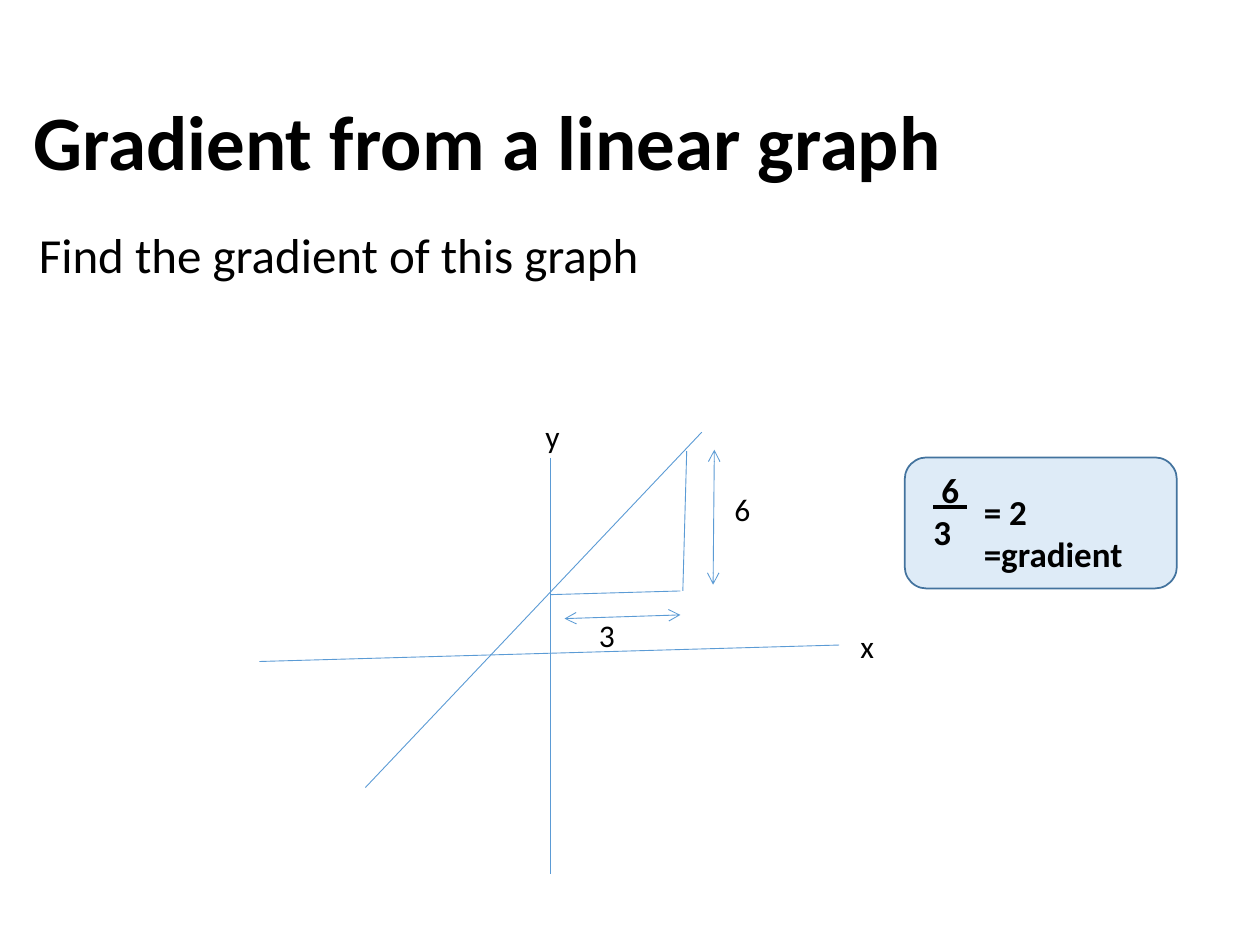
import pptx
import pptx.dml.color
import pptx.enum.shapes
import pptx.enum.text
import pptx.oxml.ns
import pptx.util
from lxml import etree

Pt = pptx.util.Pt
RGBColor = pptx.dml.color.RGBColor
BLACK = RGBColor(0x00, 0x00, 0x00)
GRAPH_BLUE = RGBColor(0x5B, 0x9B, 0xD5)
PANEL_FILL = RGBColor(0xDE, 0xEB, 0xF7)
PANEL_EDGE = RGBColor(0x43, 0x73, 0x9E)

TITLE = {"size": Pt(44), "bold": True}
QUESTION = {"size": Pt(28)}
LABEL = {"size": Pt(18)}
ANSWER = {"size": Pt(20), "bold": True}

GRAPH_LINES = [
    ((314.6, 262), (314.6, 499.7)),
    ((148.3, 378), (479.5, 368.6)),
    ((208.8, 450), (401, 247)),
    ((314.6, 339.8), (388.8, 337.7)),
    ((390.2, 337.7), (392.4, 257.8)),
]
MEASURES = [
    ((408.2, 257), (407.5, 334.1)),
    ((322.6, 353.5), (388.8, 351.4)),
]
LABELS = [("6", 412.6, 276.5), ("3", 335.2, 348.5), ("x", 484.6, 355), ("y", 304.6, 234.7)]


def add_text(slide, box, paragraphs, style):
    frame = slide.shapes.add_textbox(*map(Pt, box)).text_frame
    frame.word_wrap = True
    for index, content in enumerate(paragraphs):
        paragraph = frame.add_paragraph() if index else frame.paragraphs[0]
        run = paragraph.add_run()
        run.text = content
        run.font.color.rgb = BLACK
        for name, value in {"name": "Calibri", **style}.items():
            setattr(run.font, name, value)
    return frame


def add_line(slide, start, end, arrows=False):
    line = slide.shapes.add_connector(
        pptx.enum.shapes.MSO_CONNECTOR.STRAIGHT, *map(Pt, start + end))
    line.line.color.rgb = GRAPH_BLUE
    line.line.width = Pt(0.5)
    if arrows:
        outline = line.line._get_or_add_ln()
        for tag in ("a:headEnd", "a:tailEnd"):
            etree.SubElement(outline, pptx.oxml.ns.qn(tag), type="arrow")
    etree.SubElement(line._element.spPr, pptx.oxml.ns.qn("a:effectLst"))


def add_panel(slide, box):
    panel = slide.shapes.add_shape(
        pptx.enum.shapes.MSO_SHAPE.ROUNDED_RECTANGLE, *map(Pt, box))
    panel.shadow.inherit = False
    panel.fill.solid()
    panel.fill.fore_color.rgb = PANEL_FILL
    panel.line.color.rgb = PANEL_EDGE
    panel.line.width = Pt(1)


def add_answer(slide):
    fraction = add_text(slide, (526.3, 264.2, 79.2, 55.4), [" 6 ", "3"], ANSWER)
    fraction.paragraphs[0].runs[0].font.underline = True
    add_text(slide, (555.1, 276.5, 113, 55.4), ["= 2 =gradient"], ANSWER)


def main():
    deck = pptx.Presentation()
    deck.slide_width, deck.slide_height = Pt(720), Pt(540)
    slide = deck.slides.add_slide(deck.slide_layouts[6])

    add_panel(slide, (517, 261.4, 155.5, 74.9))
    title = add_text(slide, (12.2, 31, 620.6, 104.4), ["Gradient from a linear graph"], TITLE)
    title.vertical_anchor = pptx.enum.text.MSO_ANCHOR.MIDDLE
    title.paragraphs[0].line_spacing = 0.9
    add_text(slide, (15.1, 124.6, 704.9, 41), ["Find the gradient of this graph"], QUESTION)

    for start, end in GRAPH_LINES:
        add_line(slide, start, end)
    for start, end in MEASURES:
        add_line(slide, start, end, arrows=True)
    for label, left, top in LABELS:
        add_text(slide, (left, top, 61.2, 28.8), [label], LABEL)
    add_answer(slide)

    deck.save("out.pptx")


if __name__ == "__main__":
    main()
